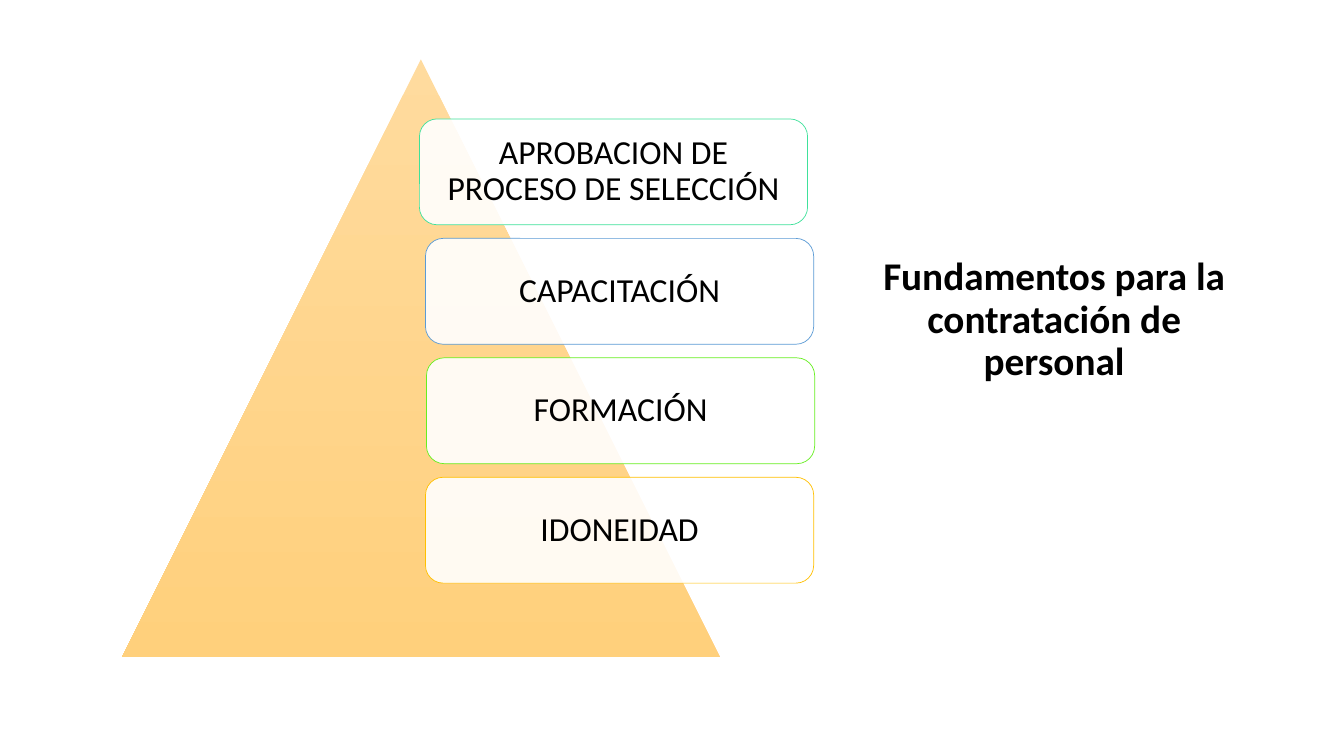
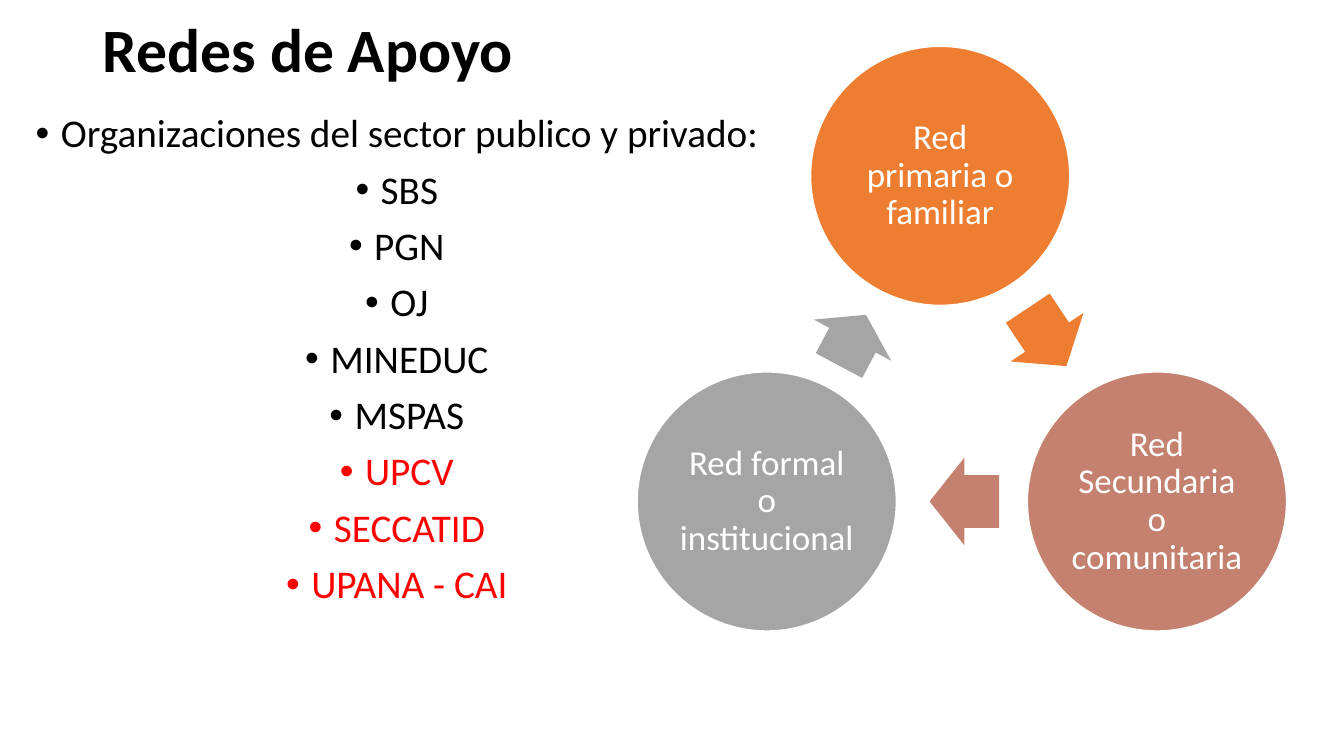
import pptx
import pptx.util
import pptx.dml.color
import pptx.enum.dml
import pptx.enum.shapes
import pptx.enum.text
import pptx.oxml.ns
import lxml.etree

Inches, Pt = pptx.util.Inches, pptx.util.Pt
SHAPE = pptx.enum.shapes.MSO_SHAPE
ALIGN = pptx.enum.text.PP_ALIGN
ANCHOR = pptx.enum.text.MSO_ANCHOR
qn = pptx.oxml.ns.qn

FONT = "Calibri"
COLORS = {
    "black": "000000", "white": "FFFFFF", "red": "FF0000",
    "light": "FFDB9E", "amber": "FFD07C",
    "mint": "3FE19B", "blue": "5B9BD5", "green": "67EF21", "gold": "FFC000",
    "orange": "ED7D31", "rose": "C48170", "gray": "A5A5A5",
}


def color(name):
    return pptx.dml.color.RGBColor.from_string(COLORS[name])


# Text style shared by all parts
def style(para, size, ink="black", bold=False, align=ALIGN.CENTER, before=0):
    para.alignment = align
    para.line_spacing = 0.9
    para.space_before = Pt(before)
    for run in para.runs:
        font = run.font
        font.name, font.size, font.bold = FONT, Pt(size), bold
        font.color.rgb = color(ink)


def place(item, box):
    item.left, item.top, item.width, item.height = map(Inches, box)


def set_title(slide, text, box, size, align, anchor):
    title = slide.shapes.title
    place(title, box)
    frame = title.text_frame
    frame.text = text
    frame.word_wrap = True
    frame.auto_size = pptx.enum.text.MSO_AUTO_SIZE.NONE
    frame.vertical_anchor = anchor
    style(frame.paragraphs[0], size, bold=True, align=align)


def set_list(holder, items, box):
    place(holder, box)
    frame = holder.text_frame
    frame.auto_size = pptx.enum.text.MSO_AUTO_SIZE.NONE
    for i, (text, ink) in enumerate(items):
        para = frame.add_paragraph() if i else frame.paragraphs[0]
        para.text = text
        props = para._p.get_or_add_pPr()
        props.set("marL", str(Inches(0.25)))
        props.set("indent", str(Inches(-0.25)))
        lxml.etree.SubElement(props, qn("a:buChar")).set("char", "•")
        style(para, 28, ink, before=10 if i else 0)


def add_form(slide, kind, box, fill=None, line=None, width=1):
    form = slide.shapes.add_shape(kind, *map(Inches, box))
    form.shadow.inherit = False
    if fill:
        form.fill.solid()
        form.fill.fore_color.rgb = color(fill)
    if line:
        form.line.color.rgb = color(line)
        form.line.width = Pt(width)
    else:
        form.line.fill.background()
    return form


def set_label(form, text, size, ink, inset):
    frame = form.text_frame
    frame.text = text
    frame.word_wrap = True
    frame.vertical_anchor = ANCHOR.MIDDLE
    frame.margin_left = frame.margin_right = Inches(inset)
    frame.margin_top = frame.margin_bottom = Inches(inset)
    style(frame.paragraphs[0], size, ink)


def add_peak(slide, box):
    peak = add_form(slide, SHAPE.ISOSCELES_TRIANGLE, box)
    peak.fill.gradient()
    peak.fill.gradient_angle = 270
    for stop, name in zip(peak.fill.gradient_stops, ("light", "amber")):
        stop.color.rgb = color(name)


def add_card(slide, text, left, top, line):
    card = add_form(slide, SHAPE.ROUNDED_RECTANGLE, (left, top, 3.85, 1.05),
                    "white", line, 0.5)
    tint = card._element.spPr.find(qn("a:solidFill"))[0]
    lxml.etree.SubElement(tint, qn("a:alpha")).set("val", "90000")
    set_label(card, text, 24, "black", 0.1)


def add_disc(slide, text, left, top, fill):
    disc = add_form(slide, SHAPE.OVAL, (left, top, 2.57, 2.57), fill, "white")
    set_label(disc, text, 25, "white", 0.03)


def add_arrow(slide, box, turn, fill):
    arrow = add_form(slide, SHAPE.RIGHT_ARROW, box, fill)
    arrow.adjustments[0], arrow.adjustments[1] = 0.6, 0.5
    arrow.rotation = turn


# Hiring basics: pyramid with four cards
def build_basics(deck):
    slide = deck.slides.add_slide(deck.slide_layouts[5])
    set_title(slide, "Fundamentos para la contratación de personal",
              (8.45, 2.5, 4.01, 2.38), 28, ALIGN.CENTER, ANCHOR.TOP)
    add_peak(slide, (1.21, 0.59, 5.93, 5.93))
    cards = [
        ("APROBACION DE PROCESO DE SELECCIÓN", 4.16, "mint"),
        ("CAPACITACIÓN", 4.22, "blue"),
        ("FORMACIÓN", 4.23, "green"),
        ("IDONEIDAD", 4.22, "gold"),
    ]
    for i, (text, left, line) in enumerate(cards):
        add_card(slide, text, left, 1.18 + i * 1.185, line)


# Support networks: list and cycle of three discs
def build_nets(deck):
    slide = deck.slides.add_slide(deck.slide_layouts[1])
    set_title(slide, "Redes de Apoyo", (0.92, 0, 5.53, 1.05), 44,
              ALIGN.LEFT, ANCHOR.MIDDLE)
    plain = ["Organizaciones del sector publico y privado:",
             "SBS", "PGN", "OJ", "MINEDUC", "MSPAS"]
    marked = ["UPCV", "SECCATID", "UPANA - CAI"]
    items = [(t, "black") for t in plain] + [(t, "red") for t in marked]
    set_list(slide.placeholders[1], items, (0.25, 1.08, 7.37, 5.86))
    cycle = [
        ("Red primaria o familiar", 8.04, 0.46, "orange",
         (10.04, 2.91, 0.69, 0.87), 56.3),
        ("Red Secundaria o comunitaria", 10.19, 3.69, "rose",
         (9.22, 4.54, 0.69, 0.87), 180),
        ("Red formal o institucional", 6.32, 3.69, "gray",
         (8.17, 2.94, 0.57, 0.87), 298),
    ]
    for text, left, top, fill, box, turn in cycle:
        add_disc(slide, text, left, top, fill)
        add_arrow(slide, box, turn, fill)


def main():
    deck = pptx.Presentation()
    deck.slide_width, deck.slide_height = Inches(13.33), Inches(7.5)
    build_basics(deck)
    build_nets(deck)
    deck.save("out.pptx")


if __name__ == "__main__":
    main()
